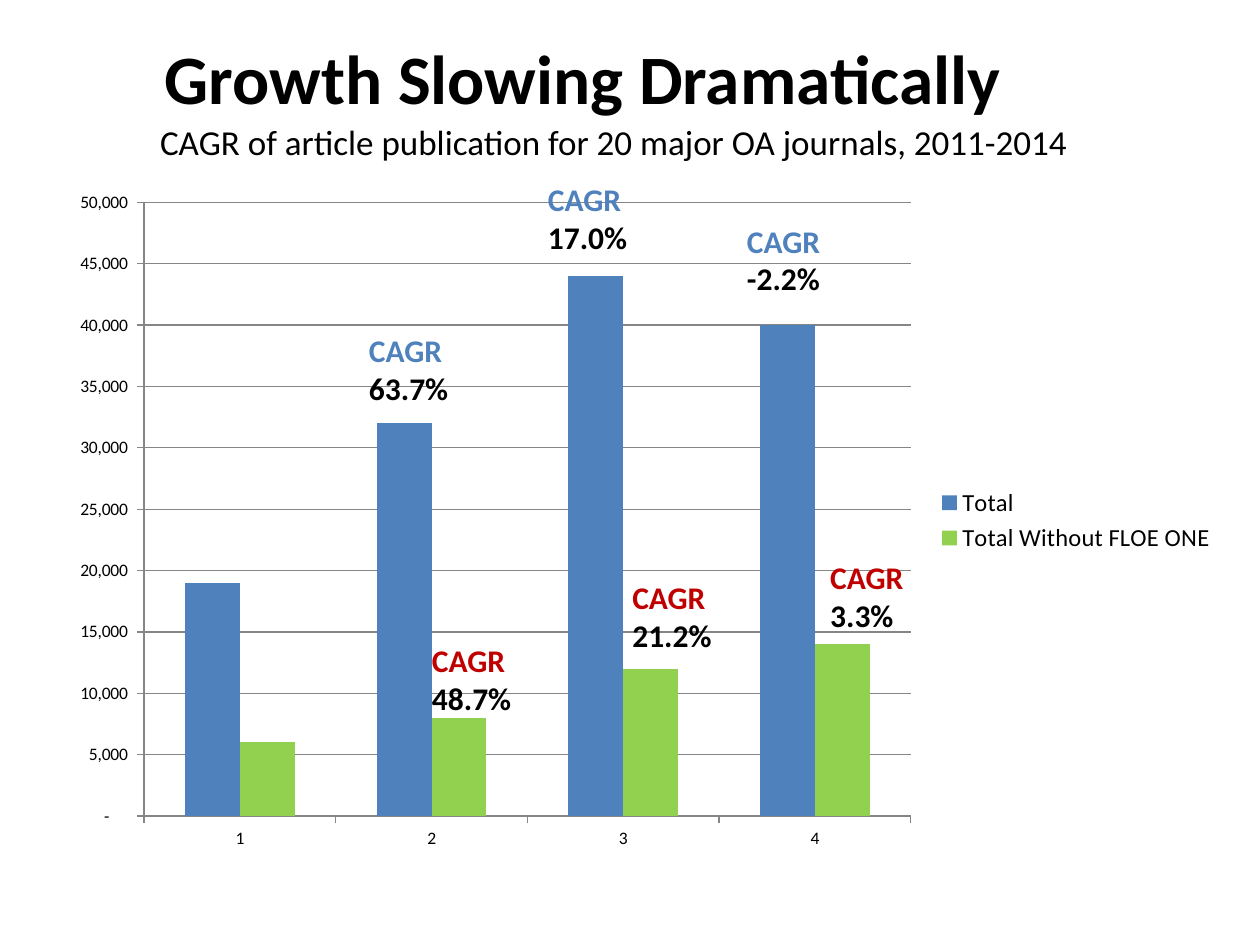
from dataclasses import dataclass

from lxml import etree
from pptx import Presentation
from pptx.chart.data import CategoryChartData
from pptx.dml.color import RGBColor
from pptx.enum.chart import XL_CHART_TYPE, XL_LEGEND_POSITION, XL_TICK_MARK
from pptx.enum.text import MSO_ANCHOR, MSO_AUTO_SIZE, PP_ALIGN
from pptx.oxml.ns import qn
from pptx.util import Inches, Pt

COLUMN = XL_CHART_TYPE.COLUMN_CLUSTERED
RIGHT = XL_LEGEND_POSITION.RIGHT
OUT = XL_TICK_MARK.OUTSIDE
NONE = MSO_AUTO_SIZE.NONE
GROW = MSO_AUTO_SIZE.SHAPE_TO_FIT_TEXT
MIDDLE = MSO_ANCHOR.MIDDLE
TOP = MSO_ANCHOR.TOP
CENTER = PP_ALIGN.CENTER
LEFT = PP_ALIGN.LEFT

FONT = "Calibri"
BLACK = "000000"
BLUE = "4F81BD"
GREEN = "92D050"
RED = "C00000"
GRAY = "868686"
COUNT = '_(* #,##0_);_(* \\(#,##0\\);_(* "-"??_);_('


@dataclass
class Series:
    name: str
    vals: tuple
    color: str


@dataclass
class Label:
    left: float
    top: float
    rate: str
    color: str


SERIES = [
    Series("Total", (19000, 32000, 44000, 40000), BLUE),
    Series("Total Without FLOE ONE", (6000, 8000, 12000, 14000), GREEN),
]
LABELS = [
    Label(5.83, 1.71, "-2.2%", BLUE),
    Label(4.25, 1.38, "17.0%", BLUE),
    Label(2.83, 2.58, "63.7%", BLUE),
    Label(6.49, 4.38, "3.3%", RED),
    Label(4.92, 4.54, "21.2%", RED),
    Label(3.33, 5.04, "48.7%", RED),
]


def rgb(color: str) -> RGBColor:
    return RGBColor.from_string(color)


def style(font, size: float, color: str = BLACK, bold: bool = False) -> None:
    font.name = FONT
    font.size = Pt(size)
    font.bold = bold
    font.color.rgb = rgb(color)


def fill_holder(shape, box: tuple, text: str, size: float, bold: bool,
                anchor, align) -> None:
    shape.left, shape.top, shape.width, shape.height = map(Inches, box)
    frame = shape.text_frame
    frame.text = text
    frame.auto_size = NONE
    frame.word_wrap = True
    frame.vertical_anchor = anchor
    para = frame.paragraphs[0]
    para.alignment = align
    style(para.font, size, bold=bold)


def drop_bullet(para) -> None:
    props = para._p.get_or_add_pPr()
    props.set("marL", "0")
    props.set("indent", "0")
    mark = etree.Element(qn("a:buNone"))
    props.insert_element_before(mark, "a:tabLst", "a:defRPr", "a:extLst")


def draw_chart(slide) -> None:
    data = CategoryChartData()
    data.categories = ["1", "2", "3", "4"]
    for item in SERIES:
        data.add_series(item.name, item.vals)
    box = map(Inches, (0.42, 1.42, 9.33, 5.42))
    chart = slide.shapes.add_chart(COLUMN, *box, data).chart
    chart.has_title = False
    style(chart.font, 10)
    plot = chart.plots[0]
    plot.gap_width = 150
    plot.overlap = 0
    plot.vary_by_categories = False
    for bars, item in zip(plot.series, SERIES):
        bars.format.fill.solid()
        bars.format.fill.fore_color.rgb = rgb(item.color)
    values = chart.value_axis
    values.minimum_scale = 0
    values.maximum_scale = 50000
    values.major_unit = 5000
    values.has_major_gridlines = True
    values.tick_labels.number_format = COUNT
    values.tick_labels.number_format_is_linked = False
    for axis in (values, chart.category_axis):
        axis.major_tick_mark = OUT
        axis.format.line.color.rgb = rgb(GRAY)
    values.major_gridlines.format.line.color.rgb = rgb(GRAY)
    chart.has_legend = True
    chart.legend.position = RIGHT
    chart.legend.include_in_layout = False
    style(chart.legend.font, 14)


def draw_label(slide, label: Label) -> None:
    box = map(Inches, (label.left, label.top, 0.85, 0.71))
    frame = slide.shapes.add_textbox(*box).text_frame
    frame.word_wrap = False
    frame.auto_size = GROW
    frame.text = f"CAGR\n{label.rate}"
    for para, color in zip(frame.paragraphs, (label.color, BLACK)):
        style(para.font, 18, color, True)


def main() -> None:
    deck = Presentation()
    deck.slide_width, deck.slide_height = Inches(10), Inches(7.5)
    slide = deck.slides.add_slide(deck.slide_layouts[1])
    title, body = slide.placeholders
    fill_holder(title, (0, 0.39, 9.25, 0.44), "Growth Slowing Dramatically",
                39.6, True, MIDDLE, CENTER)
    fill_holder(body, (1.17, 0.91, 7.61, 0.43),
                "CAGR of article publication for 20 major OA journals, 2011-2014",
                20, False, TOP, LEFT)
    drop_bullet(body.text_frame.paragraphs[0])
    draw_chart(slide)
    for label in LABELS:
        draw_label(slide, label)
    deck.save("out.pptx")


if __name__ == "__main__":
    main()
